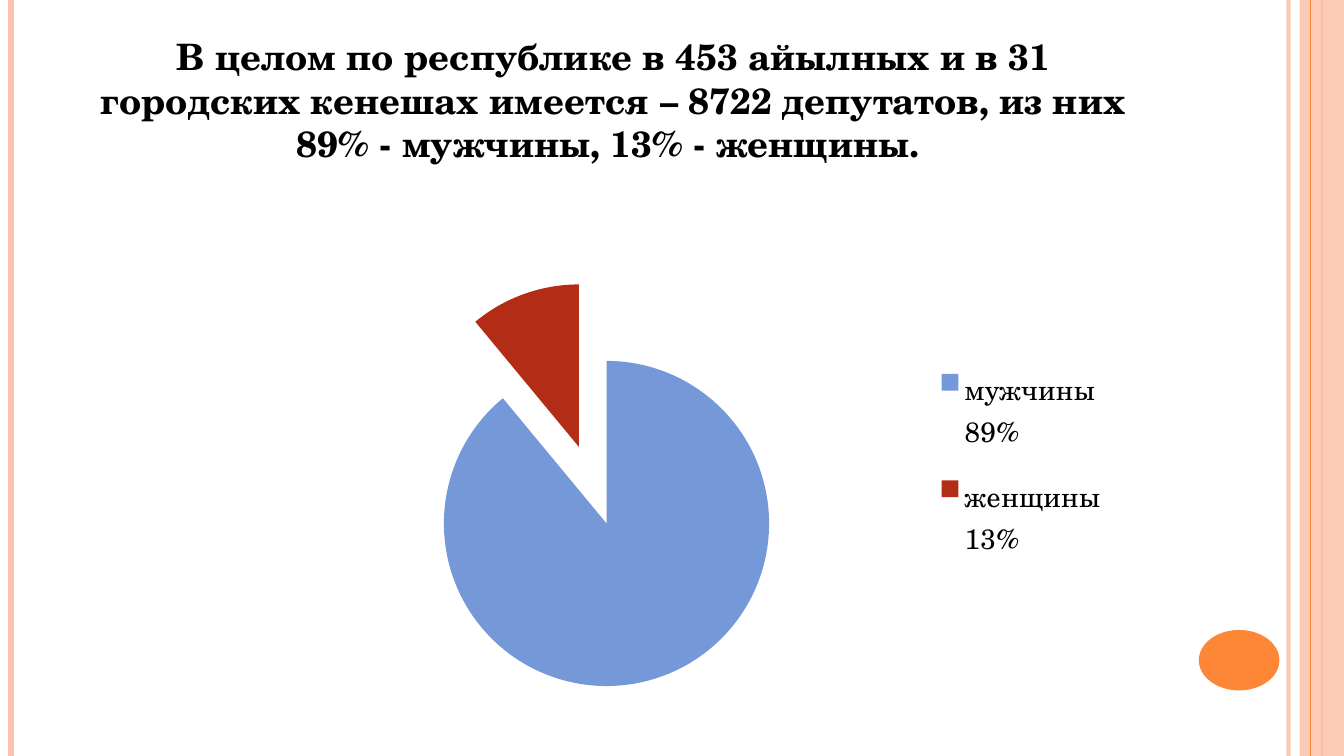
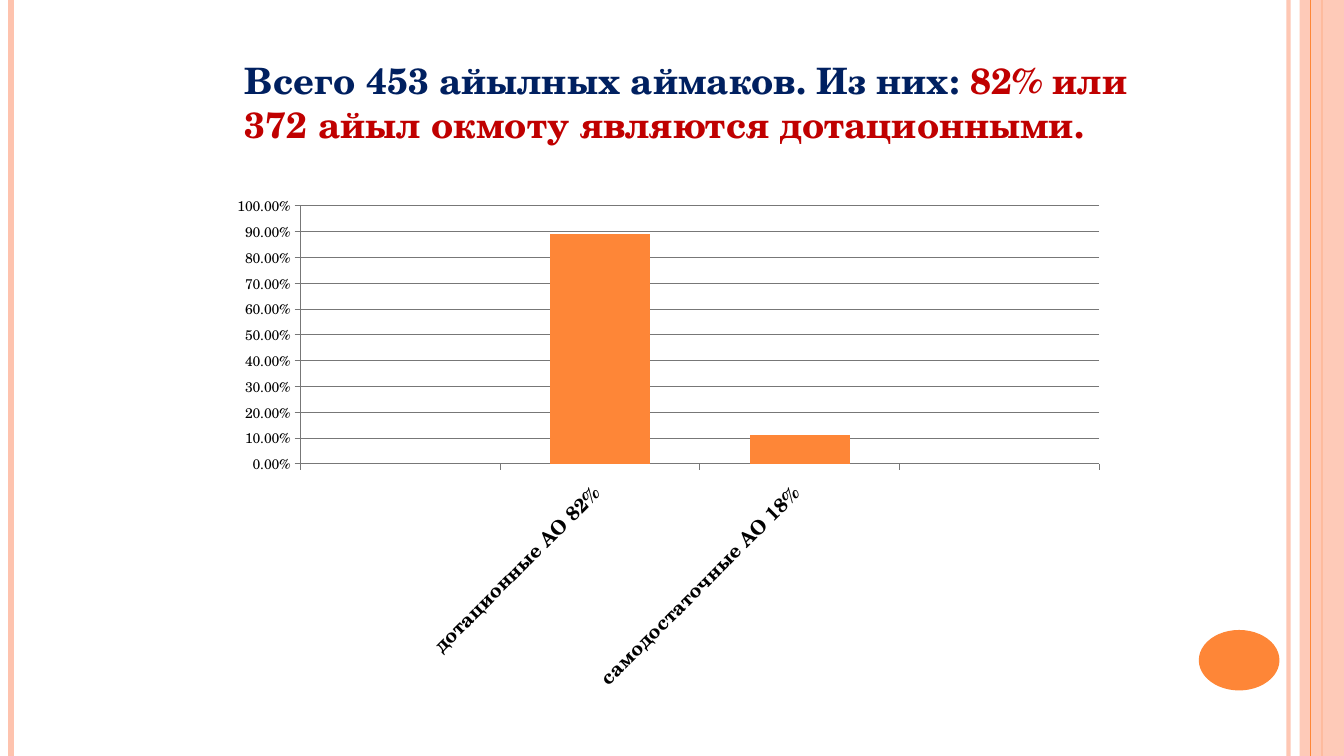
from typing import NamedTuple

from pptx import Presentation
from pptx.chart.chart import Chart
from pptx.chart.data import CategoryChartData
from pptx.dml.color import RGBColor
from pptx.dml.fill import FillFormat
from pptx.enum.chart import XL_CHART_TYPE, XL_LEGEND_POSITION, XL_TICK_MARK
from pptx.enum.shapes import MSO_CONNECTOR, MSO_SHAPE
from pptx.enum.text import MSO_ANCHOR, MSO_AUTO_SIZE, PP_ALIGN
from pptx.oxml import parse_xml
from pptx.oxml.ns import nsdecls, qn
from pptx.oxml.xmlchemy import OxmlElement
from pptx.util import Inches, Pt

PIE, STACK = XL_CHART_TYPE.PIE, XL_CHART_TYPE.COLUMN_STACKED
RIGHT, OUT = XL_LEGEND_POSITION.RIGHT, XL_TICK_MARK.OUTSIDE
STRAIGHT = MSO_CONNECTOR.STRAIGHT
RECT, OVAL = MSO_SHAPE.RECTANGLE, MSO_SHAPE.OVAL
TOP, NO_FIT = MSO_ANCHOR.TOP, MSO_AUTO_SIZE.NONE
LEFT, CENTER = PP_ALIGN.LEFT, PP_ALIGN.CENTER

FONT = "TeX Gyre Schola"
WIDTH, HEIGHT = 13.33, 7.5
BLACK, NAVY, CRIMSON = "000000", "002060", "C00000"
ORANGE, PEACH, GRAY = "FE8637", "FEC3AE", "777777"
BLUE, RED, YELLOW = "7598D9", "B32C16", "F5CD2D"


class Box(NamedTuple):
    left: float
    top: float
    width: float
    height: float


class Rule(NamedTuple):
    x: float
    color: str
    weight: float
    alpha: int = 100


class Part(NamedTuple):
    text: str
    color: str


BACK_RULES = [Rule(12.78, PEACH, 3, 93), Rule(0.11, PEACH, 4.5),
              Rule(13.11, ORANGE, 1.5)]
FRONT_RULE = Rule(13, ORANGE, 0.75)
BAND = Box(12.89, 0, 0.44, HEIGHT)
DISC = Box(11.89, 6.25, 0.8, 0.6)


def place(box: Box) -> list:
    return [Inches(side) for side in box]


def paint(fill: FillFormat, color: str) -> None:
    fill.solid()
    fill.fore_color.rgb = RGBColor.from_string(color)


def fade(shape, alpha: int) -> None:
    """Give the first colour of a shape its opacity in percent."""
    if alpha < 100:
        tint = OxmlElement("a:alpha")
        tint.set("val", str(alpha * 1000))
        shape.element.xpath("./p:spPr//a:srgbClr")[0].append(tint)


def add_rule(slide, rule: Rule) -> None:
    x = Inches(rule.x)
    line = slide.shapes.add_connector(STRAIGHT, x, 0, x, Inches(HEIGHT))
    paint(line.line.fill, rule.color)
    line.line.width = Pt(rule.weight)
    fade(line, rule.alpha)
    line.element.spPr.append(OxmlElement("a:effectLst"))


def add_block(slide, kind, box: Box, color: str, alpha: int = 100) -> None:
    shape = slide.shapes.add_shape(kind, *place(box))
    shape.shadow.inherit = False
    paint(shape.fill, color)
    shape.line.fill.background()
    fade(shape, alpha)


def add_slide(deck, box: Box, align, parts: list[Part]):
    """Add a slide with the shared side bands and a title."""
    slide = deck.slides.add_slide(deck.slide_layouts[5])
    for rule in BACK_RULES:
        add_rule(slide, rule)
    add_block(slide, RECT, BAND, PEACH, 87)
    add_rule(slide, FRONT_RULE)
    add_block(slide, OVAL, DISC, ORANGE)

    title = slide.shapes.title
    title.left, title.top, title.width, title.height = place(box)
    frame = title.text_frame
    frame.word_wrap, frame.auto_size = True, NO_FIT
    frame.vertical_anchor = TOP
    line = frame.paragraphs[0]
    line.alignment = align
    for part in parts:
        run = line.add_run()
        run.text = part.text
        run.font.name, run.font.size, run.font.bold = FONT, Pt(26), True
        run.font.color.rgb = RGBColor.from_string(part.color)
    return slide


def set_layout(parent, index: int, box: Box, inner: bool = False) -> None:
    """Place a chart part by fractions of the chart's size."""
    for old in parent.findall(qn("c:layout")):
        parent.remove(old)
    target = '<c:layoutTarget val="inner"/>' if inner else ""
    modes = "".join(f'<c:{side}Mode val="edge"/>' for side in "xy")
    sizes = "".join(f'<c:{key} val="{size}"/>' for key, size in zip("xywh", box))
    parent.insert(index, parse_xml(
        f'<c:layout {nsdecls("c")}><c:manualLayout>{target}{modes}{sizes}'
        "</c:manualLayout></c:layout>"))


def add_chart(slide, kind, box: Box, plot: Box, names: list[str],
              values: list, form: str = "General") -> Chart:
    data = CategoryChartData(number_format=form)
    data.categories = names
    data.add_series("Series 1", values)
    chart = slide.shapes.add_chart(kind, *place(box), data).chart
    chart.has_title = chart.has_legend = False
    chart.font.name, chart.font.size = FONT, Pt(10)
    chart.font.color.rgb = RGBColor.from_string(BLACK)
    set_layout(chart.element.xpath(".//c:plotArea")[0], 0, plot, True)
    return chart


def add_pie(slide) -> None:
    names = ["", "мужчины 89%", "женщины 13%", ""]
    values = [None, 89, 11, None]
    chart = add_chart(slide, PIE, Box(2.49, 2.65, 8.58, 4.33),
                      Box(0.16, 0.03, 0.47, 0.94), names, values)
    chart.plots[0].vary_by_categories = True
    series = chart.plots[0].series[0]
    for index, color in enumerate([ORANGE, BLUE, RED, YELLOW]):
        paint(series.points[index].format.fill, color)
    burst = OxmlElement("c:explosion")
    burst.set("val", "25")
    chart.element.xpath(".//c:dPt")[0].addprevious(burst)

    chart.has_legend = True
    legend = chart.legend
    legend.position, legend.include_in_layout = RIGHT, False
    legend.font.name, legend.font.size = FONT, Pt(20)
    legend.font.color.rgb = RGBColor.from_string(BLACK)
    root = chart.element.xpath(".//c:legend")[0]
    blanks = [index for index, name in enumerate(names) if not name]
    for spot, index in enumerate(blanks, 1):
        root.insert(spot, parse_xml(
            f'<c:legendEntry {nsdecls("c")}><c:idx val="{index}"/>'
            '<c:delete val="1"/></c:legendEntry>'))
    set_layout(root, len(blanks) + 1, Box(0.79, 0.18, 0.2, 0.54))


def add_bars(slide) -> None:
    names = ["", "дотационные АО 82% ", "самодостаточные АО 18% ", ""]
    chart = add_chart(slide, STACK, Box(2.18, 1.94, 8.9, 5.12),
                      Box(0.09, 0.02, 0.89, 0.5),
                      names, [None, 0.89, 0.11, None], "0.00%")
    plot = chart.plots[0]
    plot.gap_width, plot.overlap = 100, 100
    plot.vary_by_categories = False
    paint(plot.series[0].format.fill, ORANGE)

    rows, cols = chart.value_axis, chart.category_axis
    rows.minimum_scale, rows.maximum_scale, rows.major_unit = 0, 1, 0.1
    rows.has_major_gridlines = True
    rows.tick_labels.number_format = "0.00%"
    rows.tick_labels.number_format_is_linked = False
    for axis in (rows, cols):
        axis.major_tick_mark = OUT
        paint(axis.format.line.fill, GRAY)
    paint(rows.major_gridlines.format.line.fill, GRAY)
    font = cols.tick_labels.font
    font.name, font.size, font.bold = FONT, Pt(14), True
    font.color.rgb = RGBColor.from_string(BLACK)
    body = chart.element.xpath(".//c:catAx/c:txPr/a:bodyPr")[0]
    body.set("rot", "-2700000")


def main() -> None:
    deck = Presentation()
    deck.slide_width, deck.slide_height = Inches(WIDTH), Inches(HEIGHT)
    add_pie(add_slide(deck, Box(0.86, 0.29, 10.45, 1.5), CENTER, [
        Part("В целом по республике в 453 айылных и в 31 городских кенешах "
             "имеется – 8722 депутатов, из них 89% - мужчины, "
             "13% - женщины. ", BLACK)]))
    add_bars(add_slide(deck, Box(2.33, 0.53, 9.13, 1.1), LEFT, [
        Part("Всего 453 айылных аймаков. Из них: ", NAVY),
        Part("82% или 372 айыл окмоту являются дотационными.", CRIMSON)]))
    deck.save("out.pptx")


if __name__ == "__main__":
    main()
